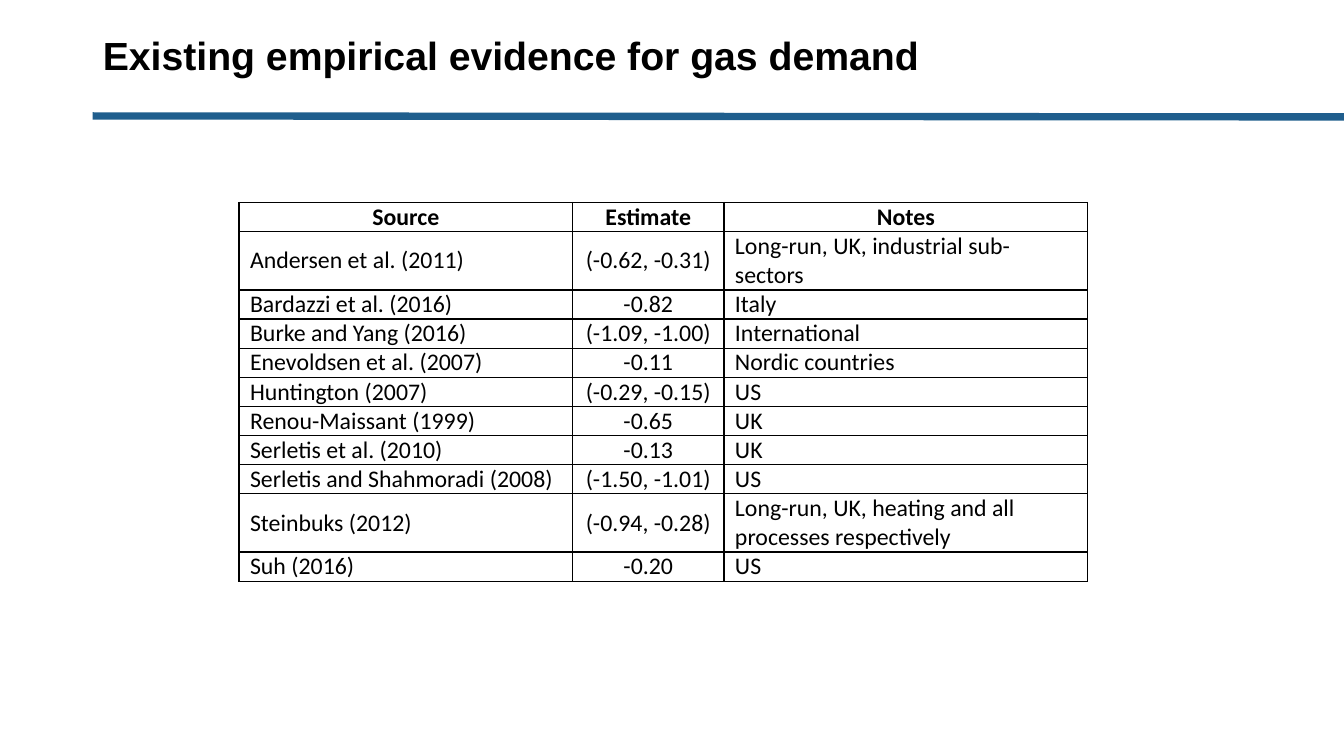
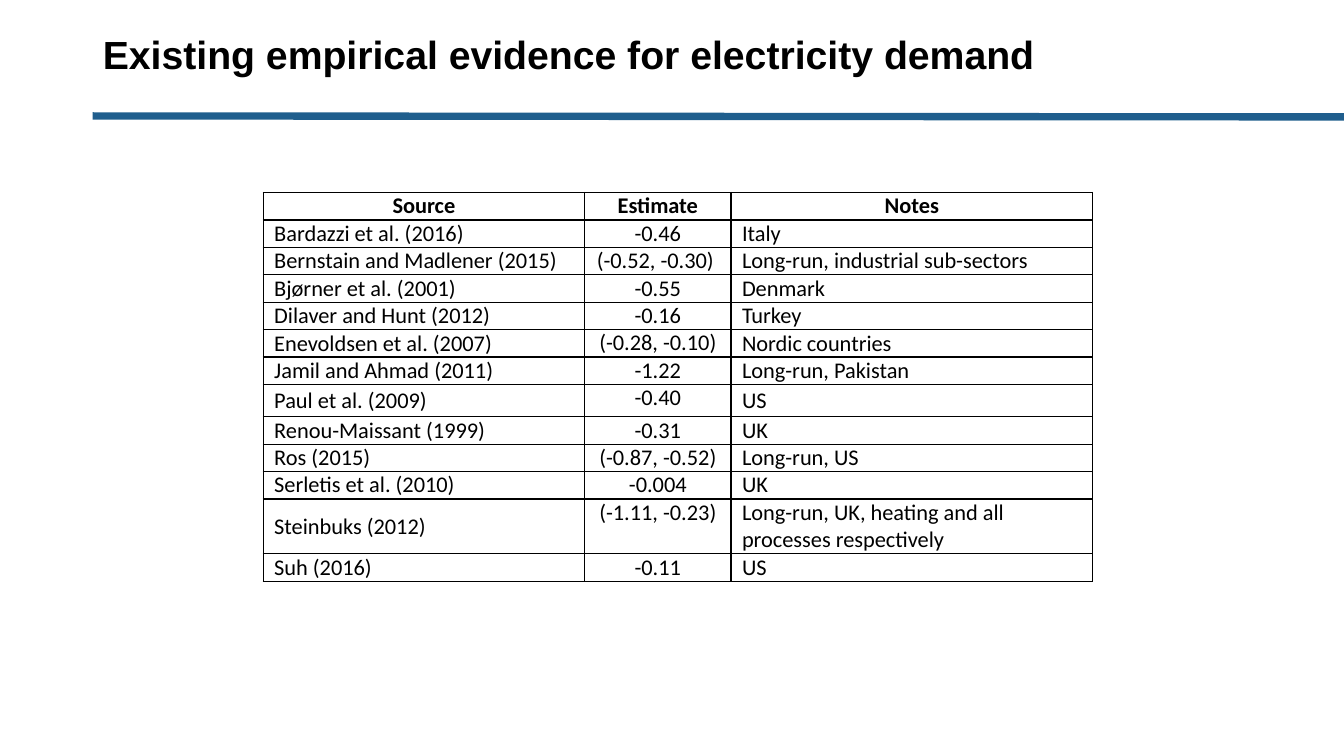
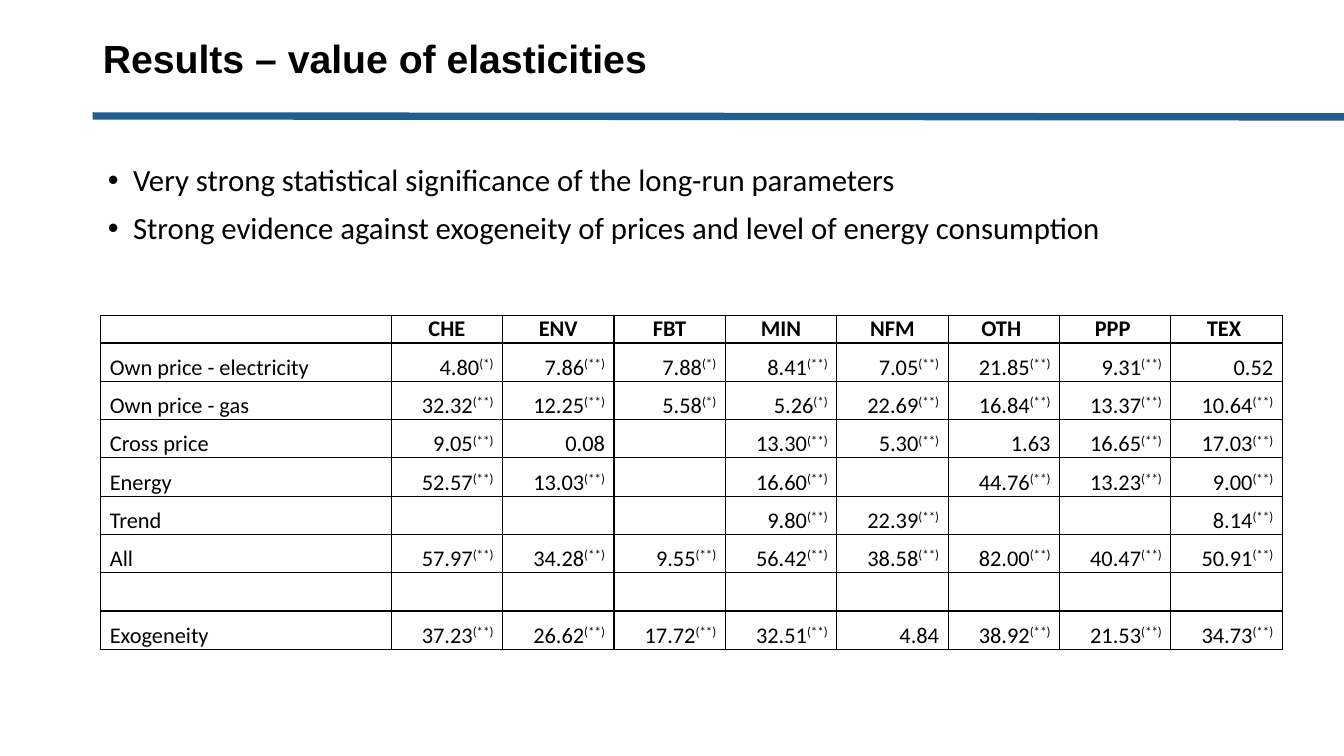
from lxml.etree import SubElement
from pptx import Presentation
from pptx.dml.color import RGBColor
from pptx.enum.shapes import MSO_CONNECTOR
from pptx.enum.text import MSO_ANCHOR as Anchor, MSO_AUTO_SIZE, PP_ALIGN as Align
from pptx.oxml.ns import qn
from pptx.util import Inches, Pt

BLACK, RULE_BLUE = "000000", "1F5E8D"
TITLE_FONT, BODY_FONT = "Arial", "Calibri"
TITLE_ONLY, TITLE_AND_CONTENT = 5, 1
TOP, MIDDLE, BOTTOM = Anchor.TOP, Anchor.MIDDLE, Anchor.BOTTOM

GAS_ROWS = [
    ("Source", "Estimate", "Notes"),
    ("Andersen et al. (2011)", "(-0.62, -0.31)", "Long-run, UK, industrial sub-sectors"),
    ("Bardazzi et al. (2016)", "-0.82", "Italy"),
    ("Burke and Yang (2016)", "(-1.09, -1.00)", "International"),
    ("Enevoldsen et al. (2007)", "-0.11", "Nordic countries"),
    ("Huntington (2007)", "(-0.29, -0.15)", "US"),
    ("Renou-Maissant (1999)", "-0.65", "UK"),
    ("Serletis et al. (2010)", "-0.13", "UK"),
    ("Serletis and Shahmoradi (2008)", "(-1.50, -1.01)", "US"),
    ("Steinbuks (2012)", "(-0.94, -0.28)",
     "Long-run, UK, heating and all processes respectively"),
    ("Suh (2016)", "-0.20", "US"),
]

ELECTRICITY_ROWS = [
    ("Source", "Estimate", "Notes"),
    ("Bardazzi et al. (2016)", "-0.46", "Italy"),
    ("Bernstain and Madlener (2015)", "(-0.52, -0.30) ", "Long-run, industrial sub-sectors"),
    ("Bjørner et al. (2001)", "-0.55", "Denmark"),
    ("Dilaver and Hunt (2012)", "-0.16", "Turkey"),
    ("Enevoldsen et al. (2007)", "(-0.28, -0.10)", "Nordic countries"),
    ("Jamil and Ahmad (2011)", "-1.22", "Long-run, Pakistan"),
    ("Paul et al. (2009)", "-0.40", "US"),
    ("Renou-Maissant (1999)", "-0.31", "UK"),
    ("Ros (2015)", "(-0.87, -0.52)", "Long-run, US"),
    ("Serletis et al. (2010)", "-0.004", "UK"),
    ("Steinbuks (2012)", "(-1.11, -0.23)",
     "Long-run, UK, heating and all processes respectively"),
    ("Suh (2016)", "-0.11", "US"),
]

# Text after ^ is set as superscript.
ELASTICITY_ROWS = [
    ("", "CHE", "ENV", "FBT", "MIN", "NFM", "OTH ", "PPP ", "TEX "),
    ("Own price - electricity", "4.80^(*)", "7.86^(**)", "7.88^(*)", "8.41^(**)",
     "7.05^(**)", "21.85^(**)", "9.31^(**)", "0.52"),
    ("Own price - gas", "32.32^(**)", "12.25^(**)", "5.58^(*)", "5.26^(*)",
     "22.69^(**)", "16.84^(**)", "13.37^(**)", "10.64^(**)"),
    ("Cross price", "9.05^(**)", "0.08", "", "13.30^(**)",
     "5.30^(**)", "1.63", "16.65^(**)", "17.03^(**)"),
    ("Energy", "52.57^(**)", "13.03^(**)", "", "16.60^(**)",
     "", "44.76^(**)", "13.23^(**)", "9.00^(**)"),
    ("Trend", "", "", "", "9.80^(**)", "22.39^(**)", "", "", "8.14^(**)"),
    ("All", "57.97^(**)", "34.28^(**)", "9.55^(**)", "56.42^(**)",
     "38.58^(**)", "82.00^(**)", "40.47^(**)", "50.91^(**)"),
    ("",) * 9,
    ("Exogeneity", "37.23^(**)", "26.62^(**)", "17.72^(**)", "32.51^(**)",
     "4.84", "38.92^(**)", "21.53^(**)", "34.73^(**)"),
]


def rgb(color):
    return RGBColor.from_string(color)


def write(paragraph, text, size, font=BODY_FONT, color=BLACK, bold=False,
          align=Align.LEFT, line_spacing=None, space_before=0):
    """Fill a paragraph with formatted text; what follows a ^ is superscript."""
    paragraph.alignment = align
    paragraph.space_before = Pt(space_before)
    if line_spacing:
        paragraph.line_spacing = line_spacing
    if not text:
        SubElement(paragraph._p, qn("a:endParaRPr"), sz=str(size * 100))
    base, _, superscript = text.partition("^")
    for part in filter(None, (base, superscript)):
        run = paragraph.add_run()
        run.text = part
        run.font.size = Pt(size)
        run.font.name = font
        run.font.bold = bold
        run.font.color.rgb = rgb(color)
    if superscript:
        run.font._element.set("baseline", "30000")


def place(shape, left, top, width, height):
    shape.left, shape.top = Inches(left), Inches(top)
    shape.width, shape.height = Inches(width), Inches(height)


def add_rule(slide):
    rule = slide.shapes.add_connector(
        MSO_CONNECTOR.STRAIGHT, Inches(0.92), Inches(1.15), Inches(13.33), Inches(1.16))
    rule.line.color.rgb = rgb(RULE_BLUE)
    rule.line.width = Pt(5.25)
    SubElement(rule._element.spPr, qn("a:effectLst"))


def add_titled_slide(presentation, layout, title, title_height):
    slide = presentation.slides.add_slide(presentation.slide_layouts[layout])
    add_rule(slide)
    shape = slide.shapes.title
    place(shape, 0.92, 0, 11.5, title_height)
    frame = shape.text_frame
    frame.auto_size = MSO_AUTO_SIZE.NONE
    frame.vertical_anchor = MIDDLE
    write(frame.paragraphs[0], title, 28, font=TITLE_FONT, bold=True, line_spacing=0.9)
    return slide


def fill_bullets(shape, items):
    frame = shape.text_frame
    frame.auto_size = MSO_AUTO_SIZE.NONE
    for index, item in enumerate(items):
        paragraph = frame.add_paragraph() if index else frame.paragraphs[0]
        properties = paragraph._p.get_or_add_pPr()
        properties.set("marL", str(Inches(0.25)))
        properties.set("indent", str(-Inches(0.25)))
        SubElement(properties, qn("a:buFont"), typeface="Arial")
        SubElement(properties, qn("a:buChar"), char="•")
        write(paragraph, item, 22, line_spacing=0.9, space_before=10 if index else 0)


def add_borders(cell):
    """Draw a thin black line on all four sides, ahead of the cell's fill."""
    properties = cell._tc.get_or_add_tcPr()
    for index, side in enumerate(("lnL", "lnR", "lnT", "lnB")):
        line = SubElement(properties, qn(f"a:{side}"), w=str(Pt(1)))
        fill = SubElement(line, qn("a:solidFill"))
        SubElement(fill, qn("a:srgbClr"), val=BLACK)
        properties.insert(index, line)


def add_grid(slide, rows, left, top, widths, heights, size, margin,
             aligns, anchors, header_anchor):
    """Add a bordered table; aligns and anchors apply by column below the header."""
    table = slide.shapes.add_table(
        len(rows), len(widths), Inches(left), Inches(top),
        Inches(sum(widths)), Inches(sum(heights))).table
    table.first_row = table.horz_banding = False
    for column, width in zip(table.columns, widths):
        column.width = Inches(width)
    for row_index, (row, height) in enumerate(zip(rows, heights)):
        table.rows[row_index].height = Inches(height)
        header = row_index == 0
        for column_index, text in enumerate(row):
            cell = table.cell(row_index, column_index)
            cell.fill.background()
            add_borders(cell)
            cell.margin_left = cell.margin_right = Inches(margin)
            cell.margin_top = cell.margin_bottom = 0
            cell.vertical_anchor = header_anchor if header else anchors[column_index]
            write(cell.text_frame.paragraphs[0], text, size, bold=header,
                  align=Align.CENTER if header else aligns[column_index])


def add_evidence_slide(presentation, title, title_height, rows, **layout):
    slide = add_titled_slide(presentation, TITLE_ONLY, title, title_height)
    add_grid(slide, rows, margin=0.11, header_anchor=TOP,
             aligns=(Align.LEFT, Align.CENTER, Align.LEFT), **layout)


def add_results_slide(presentation):
    slide = add_titled_slide(
        presentation, TITLE_AND_CONTENT, "Results – value of elasticities", 1.2)
    body = slide.placeholders[1]
    place(body, 0.97, 1.59, 11.5, 1.61)
    fill_bullets(body, [
        "Very strong statistical significance of the long-run parameters",
        "Strong evidence against exogeneity of prices and level of energy consumption",
    ])
    add_grid(slide, ELASTICITY_ROWS, left=1, top=3.13,
             widths=[2.88] + [1.105] * 8, heights=[0.24] + [0.38] * 8,
             size=16, margin=0.09, aligns=[Align.LEFT] + [Align.RIGHT] * 8,
             anchors=[BOTTOM] * 9, header_anchor=BOTTOM)


def main():
    presentation = Presentation()
    presentation.slide_width, presentation.slide_height = Inches(13.33), Inches(7.5)
    add_evidence_slide(
        presentation, "Existing empirical evidence for gas demand", 1.15, GAS_ROWS,
        left=2.37, top=2.01, widths=(3.31, 1.5, 3.61),
        heights=[0.28] * 9 + [0.56, 0.28], size=17, anchors=(MIDDLE, MIDDLE, BOTTOM))
    add_evidence_slide(
        presentation, "Existing empirical evidence for electricity demand", 1.13,
        ELECTRICITY_ROWS, left=2.61, top=1.91, widths=(3.19, 1.45, 3.59),
        heights=[0.27] * 7 + [0.32] + [0.27] * 3 + [0.54, 0.27], size=16,
        anchors=(MIDDLE, TOP, MIDDLE))
    add_results_slide(presentation)
    presentation.save("out.pptx")


if __name__ == "__main__":
    main()
